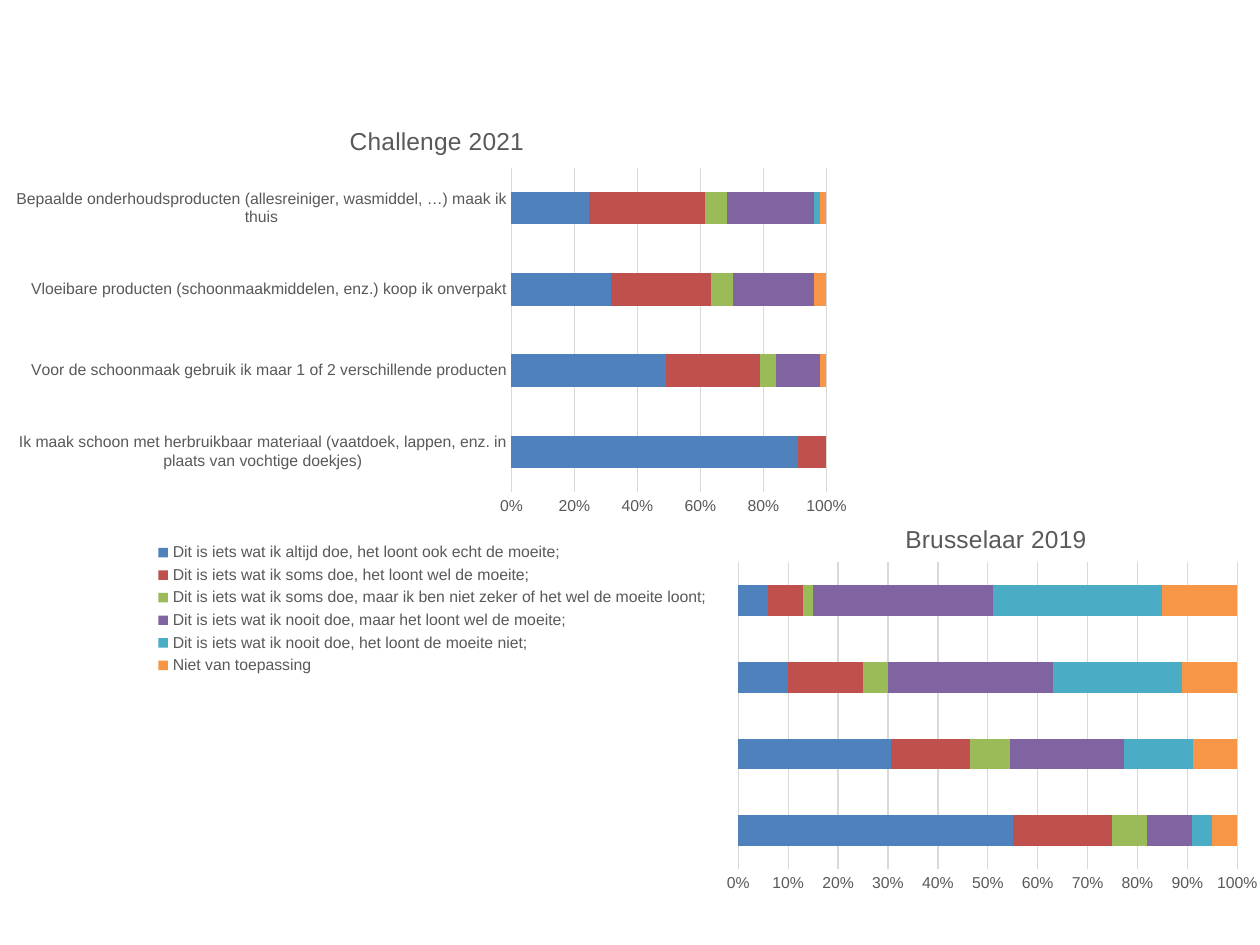
from lxml import etree
from pptx import Presentation
from pptx.chart.data import CategoryChartData
from pptx.dml.color import RGBColor
from pptx.enum.chart import XL_CHART_TYPE, XL_LEGEND_POSITION, XL_TICK_MARK
from pptx.oxml.ns import qn
from pptx.util import Inches, Pt

GREY = RGBColor(0x59, 0x59, 0x59)
LIGHT = RGBColor(0xD9, 0xD9, 0xD9)
BLACK = RGBColor(0x00, 0x00, 0x00)
BLUE = RGBColor(0x4F, 0x81, 0xBD)
RED = RGBColor(0xC0, 0x50, 0x4D)
GREEN = RGBColor(0x9B, 0xBB, 0x59)
PURPLE = RGBColor(0x80, 0x64, 0xA2)
TEAL = RGBColor(0x4B, 0xAC, 0xC6)
ORANGE = RGBColor(0xF7, 0x96, 0x46)
COLORS = [BLUE, RED, GREEN, PURPLE, TEAL, ORANGE]

STATEMENTS = [
    "Ik maak schoon met herbruikbaar materiaal (vaatdoek, lappen, enz. "
    "in plaats van vochtige doekjes)",
    "Voor de schoonmaak gebruik ik maar 1 of 2 verschillende producten",
    "Vloeibare producten (schoonmaakmiddelen, enz.) koop ik onverpakt",
    "Bepaalde onderhoudsproducten (allesreiniger, wasmiddel, …) maak ik thuis",
]
ANSWERS = [
    "Dit is iets wat ik altijd doe, het loont ook echt de moeite;",
    "Dit is iets wat ik soms doe, het loont wel de moeite;",
    "Dit is iets wat ik soms doe, maar ik ben niet zeker of het wel de moeite loont;",
    "Dit is iets wat ik nooit doe, maar het loont wel de moeite;",
    "Dit is iets wat ik nooit doe, het loont de moeite niet;",
    "Niet van toepassing",
]
# One row per answer, one value per statement
VALUES_2021 = [[91, 49, 32, 25], [9, 30, 32, 37], [0, 5, 7, 7],
               [0, 14, 26, 28], [0, 0, 0, 2], [0, 2, 4, 2]]
VALUES_2019 = [[55, 31, 10, 6], [20, 16, 15, 7], [7, 8, 5, 2],
               [9, 23, 33, 36], [4, 14, 26, 34], [5, 9, 11, 15]]


class SurveySlide:
    def __init__(self, prs, font="Arial"):
        self.s = prs.slides.add_slide(prs.slide_layouts[6])
        self.font = font

    def style(self, font, size, color=GREY):
        font.name, font.size, font.bold = self.font, Pt(size), False
        font.color.rgb = color

    def place(self, element, after, frame, box, inner=False):
        """Place a chart part; frame and box are slide inches."""
        for old in element.findall(qn("c:layout")):
            element.remove(old)
        layout = etree.Element(qn("c:layout"))
        manual = etree.SubElement(layout, qn("c:manualLayout"))
        settings = [("layoutTarget", "inner")] if inner else []
        settings += [("xMode", "edge"), ("yMode", "edge")]
        offsets = [box[0] - frame[0], box[1] - frame[1], *box[2:]]
        settings += [(tag, f"{length / frame[2 + i % 2]:.4f}")
                     for i, (tag, length) in enumerate(zip("xywh", offsets))]
        for tag, value in settings:
            etree.SubElement(manual, qn(f"c:{tag}")).set("val", value)
        if after:
            element.find(qn(after)).addnext(layout)
        else:
            element.insert(0, layout)

    def chart(self, title, frame, title_at, plot_box, cats, names, values, step):
        data = CategoryChartData()
        data.categories = cats
        for name, row in zip(names, values):
            data.add_series(name, row)
        chart = self.s.shapes.add_chart(
            XL_CHART_TYPE.BAR_STACKED_100, *map(Inches, frame), data).chart
        self.style(chart.font, 10, BLACK)
        chart.has_legend = False

        # Title
        tf = chart.chart_title.text_frame
        tf.text = title
        self.style(tf.paragraphs[0].font, 14)
        root = chart.element.find(qn("c:chart"))
        self.place(root.find(qn("c:title")), "c:tx", frame, title_at)
        self.place(root.find(qn("c:plotArea")), None, frame, plot_box, inner=True)

        # Bars
        plot = chart.plots[0]
        plot.gap_width, plot.overlap = 150, 100
        plot.vary_by_categories = False
        for series, color in zip(plot.series, COLORS):
            series.format.fill.solid()
            series.format.fill.fore_color.rgb = color

        # Axes
        for axis in (chart.category_axis, chart.value_axis):
            axis.major_tick_mark = axis.minor_tick_mark = XL_TICK_MARK.NONE
            self.style(axis.tick_labels.font, 9)
        val = chart.value_axis
        val.minimum_scale, val.maximum_scale, val.major_unit = 0, 1, step
        val.tick_labels.number_format = "0%"
        val.tick_labels.number_format_is_linked = False
        val.format.line.fill.background()
        val.has_major_gridlines = True
        for line in (val.major_gridlines.format.line,
                     chart.category_axis.format.line):
            line.color.rgb, line.width = LIGHT, Pt(0.75)
        return chart

    def legend(self, chart, frame, box):
        chart.has_legend = True
        chart.legend.position = XL_LEGEND_POSITION.BOTTOM
        chart.legend.include_in_layout = False
        self.style(chart.legend.font, 9)
        self.place(chart.legend._element, "c:legendPos", frame, box)


def main():
    prs = Presentation()
    prs.slide_width, prs.slide_height = Inches(10), Inches(7.5)
    slide = SurveySlide(prs)

    # Citywide survey, without category labels
    chart = slide.chart("Brusselaar 2019", (5.68, 3.96, 4.39, 3.19),
                        (7.15, 4.12), (5.86, 4.46, 3.96, 2.44),
                        ["1", "2", "3", "4"],
                        [f"Series {i}" for i in range(1, 7)], VALUES_2019, 0.1)
    chart.category_axis.visible = False

    # Challenge participants, with the shared legend
    frame = (0, 0.78, 6.86, 4.64)
    chart = slide.chart("Challenge 2021", frame, (2.74, 0.96),
                        (4.06, 1.33, 2.5, 2.58),
                        STATEMENTS, ANSWERS, VALUES_2021, 0.2)
    slide.legend(chart, frame, (1.19, 4.28, 4.48, 1.11))

    prs.save("out.pptx")


if __name__ == "__main__":
    main()
